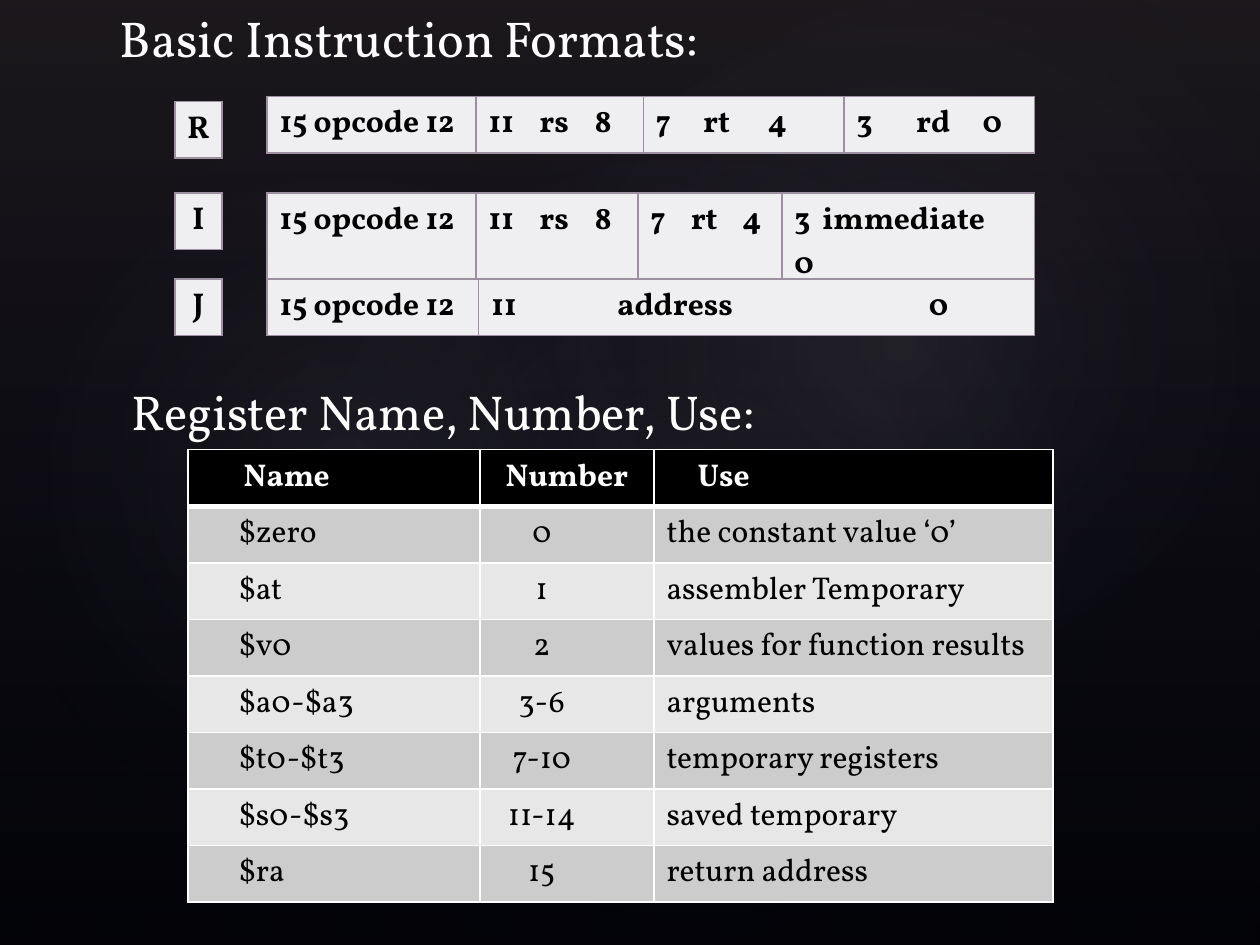
from lxml import etree
from pptx import Presentation
from pptx import util as u
from pptx.dml.color import RGBColor
from pptx.enum import shapes, text
from pptx.oxml import parse_xml
from pptx.oxml.ns import nsdecls, qn

FONT = "Vollkorn"
ROW_HEIGHT = 29.16
COLORS = {
    "black": "000000", "white": "FFFFFF", "field": "EFEEF0", "field line": "9D90A0",
    "dark row": "CCCCCC", "light row": "E7E7E7",
    "plum": "504652", "navy": "242852", "lilac": "C4BCC6",
}
GLOWS = [  # left, top, width, height, rotation, centre opacity
    (108, 82, 570, 449, 328.7, 7),
    (-21.6, 92, 436, 353, 294.3, 8),
    (258, 9.4, 510, 374, 328.7, 8),
]
# name, label top, table top, [(width, text, tab stops)]
FORMATS = [
    ("R", 58.1, 55.1, [(119.5, "15 opcode 12", ()), (95.5, "11\trs\t8", (29, 60.5)),
                       (114.8, "7\trt\t4", (27, 64)), (108.7, "3\trd\t0", (34, 72))]),
    ("I", 110.2, 110.2, [(119.5, "15 opcode 12", ()), (92.5, "11\trs\t8", (29, 60.5)),
                         (82.2, "7\trt\t4", (23, 52.5)), (144.3, "3\timmediate\v0", (16,))]),
    ("J", 159.3, 159.3, [(121, "15 opcode 12", ()), (317.5, "11\taddress\t0", (72, 250))]),
]
REGISTERS = [
    ("Name", "Number", "Use"),
    ("$zero", "0", "the constant value ‘0’"),
    ("$at", "1", "assembler Temporary"),
    ("$v0", "2", "values for function results"),
    ("$a0-$a3", "3-6", "arguments"),
    ("$t0-$t3", "7-10", "temporary registers"),
    ("$s0-$s3", "11-14", "saved temporary"),
    ("$ra", "15", "return address"),
]


def rgb(name):
    return RGBColor.from_string(COLORS[name])


class SlideBuilder:
    def __init__(self, presentation):
        self.presentation = presentation
        self.slide = presentation.slides.add_slide(presentation.slide_layouts[5])
        fill = self.slide.background.fill
        fill.solid()
        fill.fore_color.rgb = rgb("black")

    def style_runs(self, text_frame, size, color, bold=False):
        for paragraph in text_frame.paragraphs:
            for run in paragraph.runs:
                font = run.font
                font.name, font.size, font.bold = FONT, u.Pt(size), bold
                font.color.rgb = rgb(color)

    def backdrop(self, kind, box, stops, direction, rotation=0):
        """Put a translucent gradient shape on the master, behind the slide."""
        shape = self.slide.shapes.add_shape(kind, *map(u.Pt, box))
        shape.shadow.inherit = False
        shape.rotation = rotation
        shape.line.fill.background()
        stop_xml = "".join(
            f'<a:gs pos="{position * 1000}"><a:srgbClr val="{COLORS[color]}">'
            f'<a:alpha val="{opacity * 1000}"/></a:srgbClr></a:gs>'
            for position, color, opacity in stops)
        gradient = parse_xml(f'<a:gradFill {nsdecls("a")} rotWithShape="1">'
                             f'<a:gsLst>{stop_xml}</a:gsLst>{direction}</a:gradFill>')
        shape.element.spPr.find(qn("a:prstGeom")).addnext(gradient)
        self.presentation.slide_master.shapes._spTree.append(shape.element)

    def title(self, words, box):
        shape = self.slide.shapes.title
        shape.left, shape.top, shape.width, shape.height = map(u.Pt, box)
        frame = shape.text_frame
        frame.text = words
        frame.auto_size = text.MSO_AUTO_SIZE.NONE
        frame.vertical_anchor = text.MSO_ANCHOR.BOTTOM
        frame.paragraphs[0].alignment = text.PP_ALIGN.LEFT
        self.style_runs(frame, 28.8, "white")

    def heading(self, words, box):
        frame = self.slide.shapes.add_textbox(*map(u.Pt, box)).text_frame
        frame.word_wrap = True
        frame.margin_left, frame.margin_top = u.Pt(14), u.Pt(7)
        frame.text = words
        self.style_runs(frame, 28, "white")

    def table(self, left, top, widths, row_count=1):
        shape = self.slide.shapes.add_table(
            row_count, len(widths), u.Pt(left), u.Pt(top),
            u.Pt(sum(widths)), u.Pt(ROW_HEIGHT * row_count))
        table = shape.table
        table.first_row = table.horz_banding = False
        for column, width in zip(table.columns, widths):
            column.width = u.Pt(width)
        return table

    def cell(self, cell, words, fill, line, color="black", bold=False, top=1, bottom=1):
        cell.fill.solid()
        cell.fill.fore_color.rgb = rgb(fill)
        cell.text_frame.text = words
        self.style_runs(cell.text_frame, 18, color, bold)
        properties = cell._tc.get_or_add_tcPr()
        for index, (side, weight) in enumerate(
                [("L", 1), ("R", 1), ("T", top), ("B", bottom)]):
            border = etree.Element(qn(f"a:ln{side}"), w=str(u.Pt(weight)))
            solid = etree.SubElement(border, qn("a:solidFill"))
            etree.SubElement(solid, qn("a:srgbClr"), val=COLORS[line])
            properties.insert(index, border)

    def tab_stops(self, paragraph, positions):
        tabs = etree.SubElement(paragraph._p.get_or_add_pPr(), qn("a:tabLst"))
        for position in positions:
            etree.SubElement(tabs, qn("a:tab"), pos=str(u.Pt(position)), algn="l")

    def instruction_format(self, name, label_top, top, fields):
        label = self.table(100, label_top, [26.8]).cell(0, 0)
        self.cell(label, name, "field", "field line", bold=True)
        label.margin_left = label.margin_right = 0
        label.text_frame.paragraphs[0].alignment = text.PP_ALIGN.CENTER

        table = self.table(152.6, top, [width for width, _, _ in fields])
        for column, (_, words, stops) in enumerate(fields):
            cell = table.cell(0, column)
            self.cell(cell, words, "field", "field line", bold=True)
            if stops:
                self.tab_stops(cell.text_frame.paragraphs[0], stops)

    def register_table(self, left, top, widths, rows):
        table = self.table(left, top, widths, len(rows))
        for row, values in enumerate(rows):
            header = row == 0
            fill = "black" if header else "dark row" if row % 2 else "light row"
            for column, words in enumerate(values):
                cell = table.cell(row, column)
                self.cell(cell, words, fill, "white", "white" if header else "black",
                          header, top=3 if row == 1 else 1, bottom=3 if header else 1)
            name, number, use = (table.cell(row, column) for column in range(3))
            name.margin_left = u.Pt(32 if header else 29)
            number.text_frame.paragraphs[0].alignment = text.PP_ALIGN.CENTER
            if header:
                use.margin_left = u.Pt(25)
            else:
                number.margin_right = u.Pt(36)


def main():
    presentation = Presentation()
    presentation.slide_width, presentation.slide_height = u.Pt(720), u.Pt(540)
    builder = SlideBuilder(presentation)

    builder.backdrop(shapes.MSO_SHAPE.RECTANGLE, (0, 0, 720, 540),
                     [(0, "plum", 36), (100, "navy", 10)], '<a:lin ang="5400000" scaled="0"/>')
    center = ('<a:path path="circle"><a:fillToRect l="50000" t="50000" '
              'r="50000" b="50000"/></a:path>')
    for *box, rotation, opacity in GLOWS:
        builder.backdrop(shapes.MSO_SHAPE.OVAL, box,
                         [(0, "lilac", opacity), (58, "navy", 0)], center, rotation)

    builder.title("Basic Instruction Formats:", (61.2, 8.6, 594, 33.8))
    for instruction_format in FORMATS:
        builder.instruction_format(*instruction_format)
    builder.register_table(107.3, 257, (167, 99.4, 228), REGISTERS)
    builder.heading("Register Name, Number, Use:", (61.2, 211, 455, 46))
    presentation.save("out.pptx")


if __name__ == "__main__":
    main()
